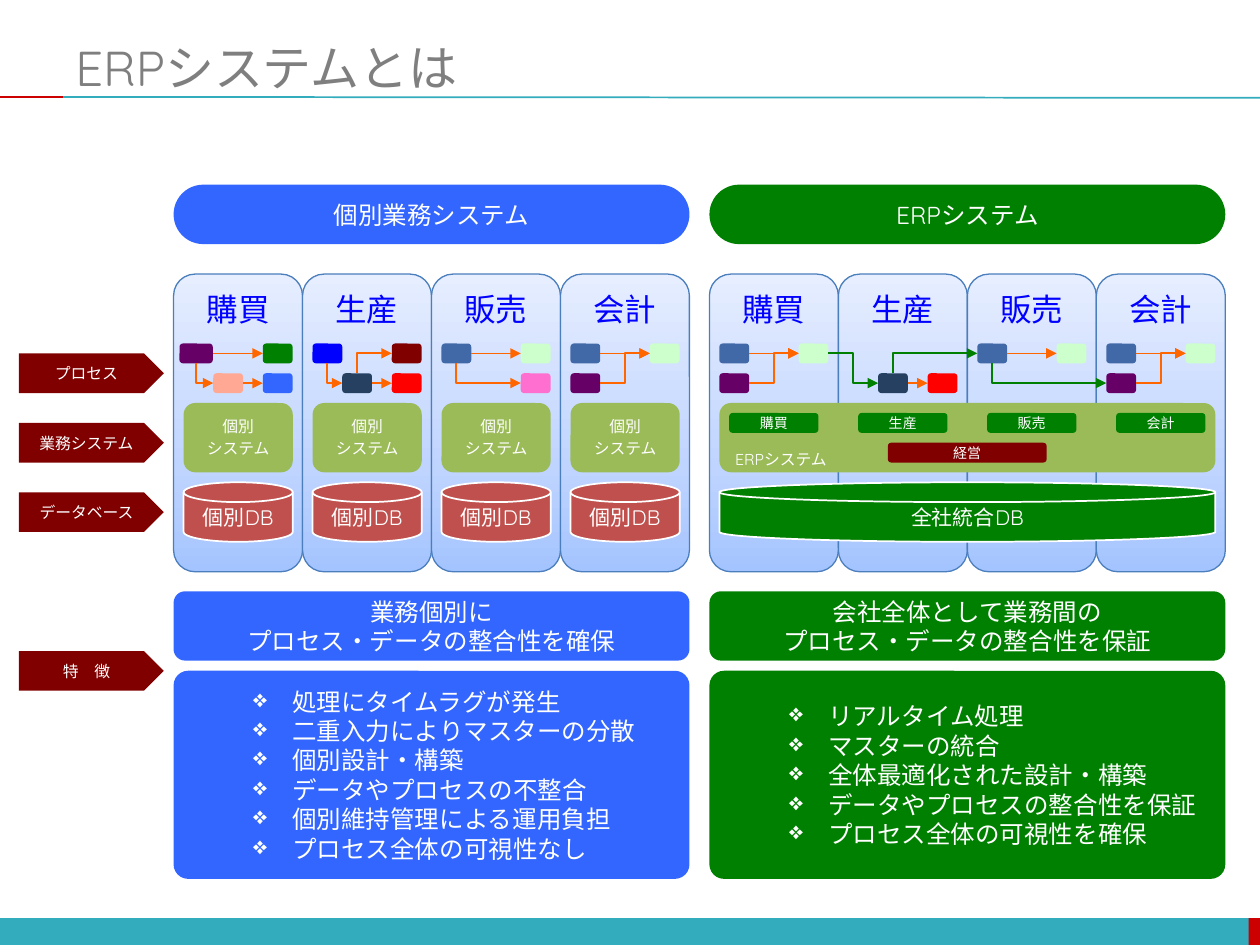
from copy import deepcopy

from lxml.etree import SubElement
from pptx import Presentation
from pptx.dml.color import RGBColor as RGB
from pptx.enum.shapes import MSO_CONNECTOR as LINK, MSO_SHAPE as SHAPE
from pptx.enum.text import MSO_ANCHOR as ANCHOR, PP_ALIGN as ALIGN
from pptx.oxml.ns import qn
from pptx.util import Pt

WHITE, GRAY = RGB(255, 255, 255), RGB(0x7F, 0x7F, 0x7F)
TEAL, CRIMSON = RGB(0x33, 0xAC, 0xBD), RGB(0xCC, 0, 0)
BLUE, PURE_BLUE, STEEL = RGB(0x33, 0x66, 0xFF), RGB(0, 0, 255), RGB(0x41, 0x68, 0xA7)
GREEN, OLIVE, MINT = RGB(0, 0x80, 0), RGB(0x9B, 0xBB, 0x59), RGB(0xCC, 0xFF, 0xCC)
MAROON, RED, BRICK = RGB(0x80, 0, 0), RGB(255, 0, 0), RGB(0xC0, 0x50, 0x4D)
PURPLE, NAVY, ORANGE = RGB(0x66, 0, 0x66), RGB(0x25, 0x40, 0x61), RGB(255, 0x66, 0)
SALMON, PINK = RGB(255, 0xA8, 0x93), RGB(255, 0x6F, 0xCF)
COLUMN_EDGE = RGB(0x4B, 0x7E, 0xBC)
COLUMN_STOPS = [(0, RGB(0xA4, 0xC4, 0xFF)), (0.35, RGB(0xBF, 0xD4, 0xFF)), (1, RGB(0xE6, 0xEE, 0xFF))]

TOP, LEFT, BOTTOM, RIGHT = range(4)
PITCH, SIDE_WIDTH, PAD = 73.7, 294.8, 5.7
INNER = 62.4
STEP_ROWS = (196.3, 213.3)
NEAR, MIDDLE, FAR = 5.7, 22.7, 51
DEPARTMENTS = ("購買", "生産", "販売", "会計")
TWO_TO_ONE = [(NEAR, 0, STEEL), (FAR, 0, MINT), (NEAR, 1, PURPLE)]

SEPARATE_STEPS = [
    [(3.4, 0, PURPLE), (MIDDLE, 1, SALMON), (FAR, 1, BLUE), (FAR, 0, GREEN)],
    [(NEAR, 0, PURE_BLUE), (MIDDLE, 1, NAVY), (FAR, 1, RED), (FAR, 0, MAROON)],
    [(NEAR, 0, STEEL), (FAR, 1, PINK), (FAR, 0, MINT)],
    TWO_TO_ONE,
]
SEPARATE_FLOWS = [
    ((0, 0), RIGHT, (0, 3), ORANGE), ((0, 0), BOTTOM, (0, 1), ORANGE), ((0, 1), RIGHT, (0, 2), ORANGE),
    ((1, 1), TOP, (1, 3), ORANGE), ((1, 1), RIGHT, (1, 2), ORANGE), ((1, 0), BOTTOM, (1, 1), ORANGE),
    ((2, 0), BOTTOM, (2, 1), ORANGE), ((2, 0), RIGHT, (2, 2), ORANGE),
    ((3, 2), RIGHT, (3, 1), ORANGE), ((3, 0), RIGHT, (3, 1), ORANGE),
]
ERP_STEPS = [
    TWO_TO_ONE,
    [(MIDDLE, 1, NAVY), (FAR, 1, RED)],
    [(NEAR, 0, STEEL), (FAR, 0, MINT)],
    TWO_TO_ONE,
]
ERP_FLOWS = [
    ((0, 2), RIGHT, (0, 1), ORANGE), ((0, 0), RIGHT, (0, 1), ORANGE),
    ((1, 0), TOP, (2, 0), GREEN), ((1, 0), RIGHT, (1, 1), ORANGE), ((0, 1), RIGHT, (1, 0), GREEN),
    ((2, 0), BOTTOM, (3, 2), GREEN), ((2, 0), RIGHT, (2, 1), ORANGE),
    ((3, 2), RIGHT, (3, 1), ORANGE), ((3, 0), RIGHT, (3, 1), ORANGE),
]


def write(frame, text, size=14, color=WHITE, align=ALIGN.CENTER, anchor=ANCHOR.MIDDLE,
          gap=0, bullet=None, wrap=True):
    frame.word_wrap = wrap
    frame.vertical_anchor = anchor
    frame.margin_top = frame.margin_bottom = 0
    for number, line in enumerate(text.split("\n")):
        paragraph = frame.add_paragraph() if number else frame.paragraphs[0]
        paragraph.alignment = align
        if number and gap:
            paragraph.space_before = Pt(gap)
        if bullet:
            properties = paragraph._p.get_or_add_pPr()
            properties.set("marL", str(Pt(58.3)))
            properties.set("indent", str(Pt(-22.3)))
            SubElement(properties, qn("a:buChar"), char=bullet)
        run = paragraph.add_run()
        run.text = line
        run.font.name, run.font.size = "Quicksand", Pt(size)
        run.font.color.rgb = color


class Board:
    """Draws styled elements on the current slide, with lengths in points."""

    def __init__(self, slide):
        self.slide = slide

    def block(self, x, y, width, height, fill, kind=SHAPE.ROUNDED_RECTANGLE, edge=None,
              edge_width=1, radius=None, text=None, **style):
        block = self.slide.shapes.add_shape(kind, Pt(x), Pt(y), Pt(width), Pt(height))
        block.shadow.inherit = False
        if radius is not None:
            block.adjustments[0] = radius
        if isinstance(fill, list):
            self.gradient(block, fill)
        else:
            block.fill.solid()
            block.fill.fore_color.rgb = fill
        if edge is None:
            block.line.fill.background()
        else:
            block.line.color.rgb, block.line.width = edge, Pt(edge_width)
        if text:
            write(block.text_frame, text, **style)
        return block

    def gradient(self, block, stops):
        block.fill.gradient()
        block.fill.gradient_angle = 90
        stop_list = block._element.spPr.find(qn("a:gradFill")).find(qn("a:gsLst"))
        stop_list.append(deepcopy(stop_list[0]))
        for stop, (position, color) in zip(block.fill.gradient_stops, stops):
            stop.position, stop.color.rgb = position, color

    def label(self, x, y, width, height, text, **style):
        box = self.slide.shapes.add_textbox(Pt(x), Pt(y), Pt(width), Pt(height))
        write(box.text_frame, text, **style)

    def line(self, x1, y1, x2, y2, color, kind=LINK.STRAIGHT):
        line = self.slide.shapes.add_connector(kind, Pt(x1), Pt(y1), Pt(x2), Pt(y2))
        line.line.color.rgb, line.line.width = color, Pt(1)
        SubElement(line._element.spPr, qn("a:effectLst"))
        return line

    def flow(self, source, side, target, color):
        straight = side == RIGHT and source.top == target.top
        arrow = self.line(0, 0, 0, 0, color, LINK.STRAIGHT if straight else LINK.ELBOW)
        outline = arrow.line._get_or_add_ln()
        if side == RIGHT:
            arrow.begin_connect(source, side)
            arrow.end_connect(target, LEFT)
            SubElement(outline, qn("a:tailEnd"), type="triangle")
        else:
            arrow.begin_connect(target, LEFT)
            arrow.end_connect(source, side)
            arrow._element.spPr.find(qn("a:prstGeom")).set("prst", "bentConnector2")
            SubElement(outline, qn("a:headEnd"), type="triangle")

    def side(self, x, color, title, summary, features, steps, flows):
        self.block(x, 105.5, SIDE_WIDTH, 34, color, radius=0.5, text=title)
        columns = [x + PITCH * number for number in range(4)]
        for left in columns:
            self.block(left, 156.6, PITCH, 170.1, COLUMN_STOPS, edge=COLUMN_EDGE, edge_width=0.75)
        boxes = {}
        for number, (left, department) in enumerate(zip(columns, DEPARTMENTS)):
            self.label(left + 11.3, 162, 51, 28.8, department, size=18, color=PURE_BLUE, wrap=False)
            for index, (offset, row, fill) in enumerate(steps[number]):
                width = 17 if offset >= NEAR else 19
                boxes[number, index] = self.block(left + offset, STEP_ROWS[row], width, 11.3, fill)
        for source, exit_side, target, arrow_color in flows:
            self.flow(boxes[source], exit_side, boxes[target], arrow_color)
        self.block(x, 337.9, SIDE_WIDTH, 39.6, color, text=summary)
        self.block(x, 383.3, SIDE_WIDTH, 118.9, color, radius=0.07, text=features,
                   align=ALIGN.LEFT, bullet="❖")
        return columns

    def system(self, x, width, text, **style):
        self.block(x + PAD, 230.3, width, 39.6, OLIVE, text=text, size=9, gap=1.8, **style)

    def database(self, x, width, fill, text):
        self.block(x + PAD, 275.6, width, 34, fill, SHAPE.FLOWCHART_MAGNETIC_DISK,
                   edge=WHITE, text=text, size=12)


def main():
    deck = Presentation()
    deck.slide_width, deck.slide_height = Pt(720), Pt(540)
    board = Board(deck.slides.add_slide(deck.slide_layouts[6]))

    board.block(0, 524.6, 720, 15.4, TEAL, SHAPE.RECTANGLE)
    board.block(713.5, 524.6, 6.5, 15.4, CRIMSON, SHAPE.RECTANGLE)
    board.line(36, 55.4, 720, 55.9, TEAL)
    board.line(0, 55.4, 36, 55.4, CRIMSON)
    board.label(36, 21.6, 684, 33.1, "ERPシステムとは", size=28, color=GRAY, align=ALIGN.LEFT)

    separate = board.side(
        99.2, BLUE, "個別業務システム", "業務個別に\nプロセス・データの整合性を確保",
        "処理にタイムラグが発生\n二重入力によりマスターの分散\n個別設計・構築\n"
        "データやプロセスの不整合\n個別維持管理による運用負担\nプロセス全体の可視性なし",
        SEPARATE_STEPS, SEPARATE_FLOWS)
    for left in separate:
        board.system(left, INNER, "個別\nシステム")
        board.database(left, INNER, BRICK, "個別DB")

    erp = board.side(
        405.4, GREEN, "ERPシステム", "会社全体として業務間の\nプロセス・データの整合性を保証",
        "リアルタイム処理\nマスターの統合\n全体最適化された設計・構築\n"
        "データやプロセスの整合性を保証\nプロセス全体の可視性を確保",
        ERP_STEPS, ERP_FLOWS)
    shared_width = SIDE_WIDTH - 2 * PAD
    board.system(erp[0], shared_width, "ERPシステム", align=ALIGN.LEFT, anchor=ANCHOR.BOTTOM)
    board.database(erp[0], shared_width, GREEN, "全社統合DB")
    for left, department in zip(erp, DEPARTMENTS):
        board.block(left + 11.3, 236, 51, 11.3, GREEN, text=department, size=8)
    board.block(507.4, 253, 90.7, 11.3, MAROON, text="経営", size=8)

    for y, aspect in ((202, "プロセス"), (241.7, "業務システム"), (281.4, "データベース"), (372.1, "特　徴")):
        board.block(10.8, y, 82.8, 22.6, MAROON, SHAPE.PENTAGON, text=aspect, size=9)

    deck.save("out.pptx")


if __name__ == "__main__":
    main()
